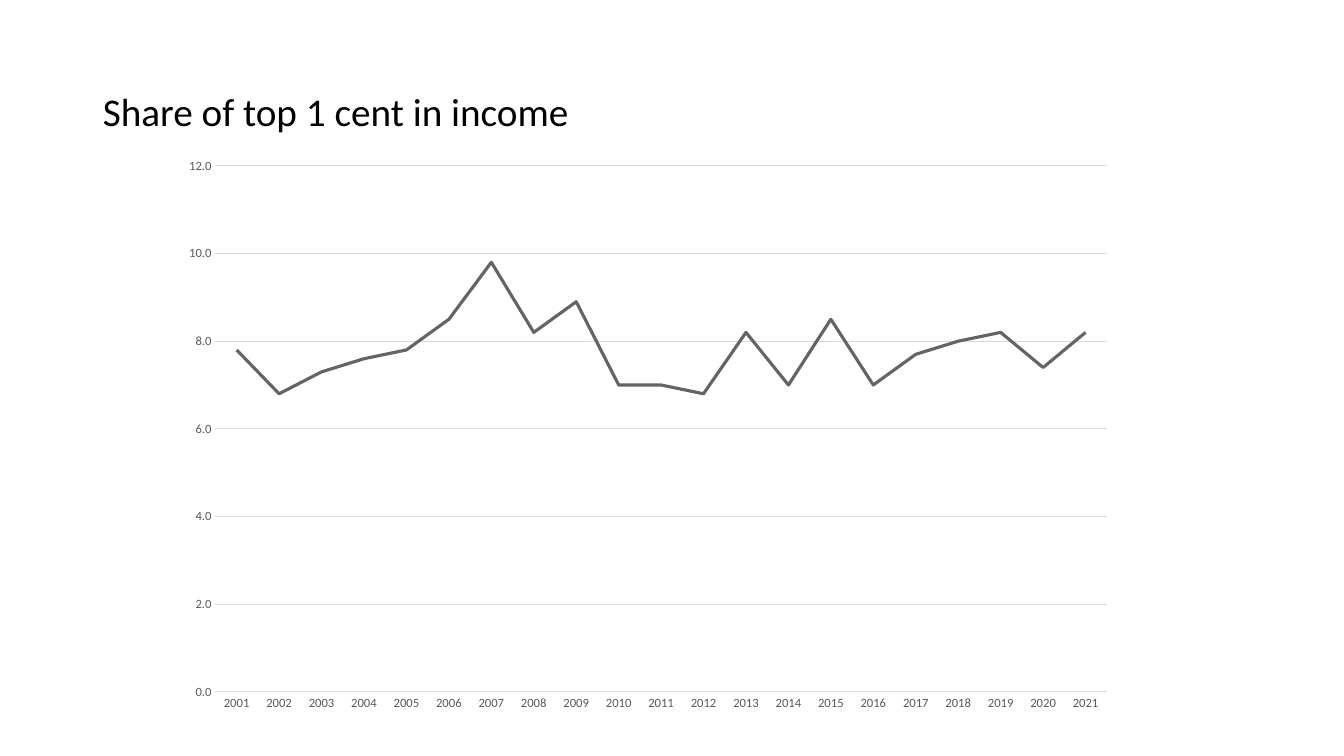
from lxml import etree
from pptx import Presentation
from pptx.chart.data import CategoryChartData as ChartData
from pptx.dml.color import RGBColor
from pptx.enum.chart import XL_CHART_TYPE as Kind, XL_MARKER_STYLE as Marker, XL_TICK_MARK as Tick
from pptx.enum.text import MSO_ANCHOR as Anchor, PP_ALIGN as Align
from pptx.oxml.ns import qn
from pptx.util import Inches, Pt

BLACK = RGBColor(0x00, 0x00, 0x00)
GREY = RGBColor(0x59, 0x59, 0x59)
PALE = RGBColor(0xD9, 0xD9, 0xD9)
DARK = RGBColor(0x64, 0x64, 0x64)
FONT = "Calibri"
YEARS = [str(year) for year in range(2001, 2022)]
SHARES = [7.8, 6.8, 7.3, 7.6, 7.8, 8.5, 9.8, 8.2, 8.9, 7, 7,
          6.8, 8.2, 7, 8.5, 7, 7.7, 8, 8.2, 7.4, 8.2]
PLOT = {"x": 0.06, "y": 0.017, "w": 0.919, "h": 0.927}


def set_font(font, size, color):
    font.name, font.size, font.bold = FONT, Pt(size), False
    font.color.rgb = color


def put_text(shape, text, size=28, color=BLACK, align=Align.LEFT, spacing=0.9):
    frame = shape.text_frame
    frame.word_wrap = True
    frame.vertical_anchor = Anchor.MIDDLE
    para = frame.paragraphs[0]
    para.alignment, para.line_spacing = align, spacing
    run = para.add_run()
    run.text = text
    set_font(run.font, size, color)


deck = Presentation()
deck.slide_width, deck.slide_height = Inches(13.33), Inches(7.5)
slide = deck.slides.add_slide(deck.slide_layouts[5])

# Title
title = slide.shapes.title
title.left, title.top = Inches(0.92), Inches(0.4)
title.width, title.height = Inches(11.5), Inches(1.45)
put_text(title, "Share of top 1 cent in income")

# Income share chart
data = ChartData(number_format="0.0")
data.categories = YEARS
data.add_series("Series 1", SHARES)
chart = slide.shapes.add_chart(Kind.LINE_STACKED, Inches(1.56), Inches(1.55),
                               Inches(9.62), Inches(5.63), data).chart
chart.has_title = False
chart.has_legend = False
set_font(chart.font, 10, BLACK)
chart.plots[0].vary_by_categories = False

line = chart.plots[0].series[0]
line.smooth = False
line.marker.style = Marker.NONE
line.format.line.color.rgb = DARK
line.format.line.width = Pt(2.25)

# Axes
years, shares = chart.category_axis, chart.value_axis
for axis in (years, shares):
    axis.major_tick_mark = axis.minor_tick_mark = Tick.NONE
    set_font(axis.tick_labels.font, 9, GREY)
shares.minimum_scale, shares.maximum_scale, shares.major_unit = 0, 12, 2
shares.tick_labels.number_format = "0.0"
shares.tick_labels.number_format_is_linked = False
shares.format.line.fill.background()
shares.has_major_gridlines = True
for rule in (years.format.line, shares.major_gridlines.format.line):
    rule.color.rgb = PALE
    rule.width = Pt(0.75)

# Inner plot area, as fractions of the chart
area = chart._chartSpace.find(".//" + qn("c:plotArea"))
for old in area.findall(qn("c:layout")):
    area.remove(old)
layout = etree.Element(qn("c:layout"))
area.insert(0, layout)
manual = etree.SubElement(layout, qn("c:manualLayout"))
modes = {"layoutTarget": "inner", "xMode": "edge", "yMode": "edge"}
for tag, value in {**modes, **PLOT}.items():
    etree.SubElement(manual, qn("c:" + tag)).set("val", str(value))

deck.save("out.pptx")
